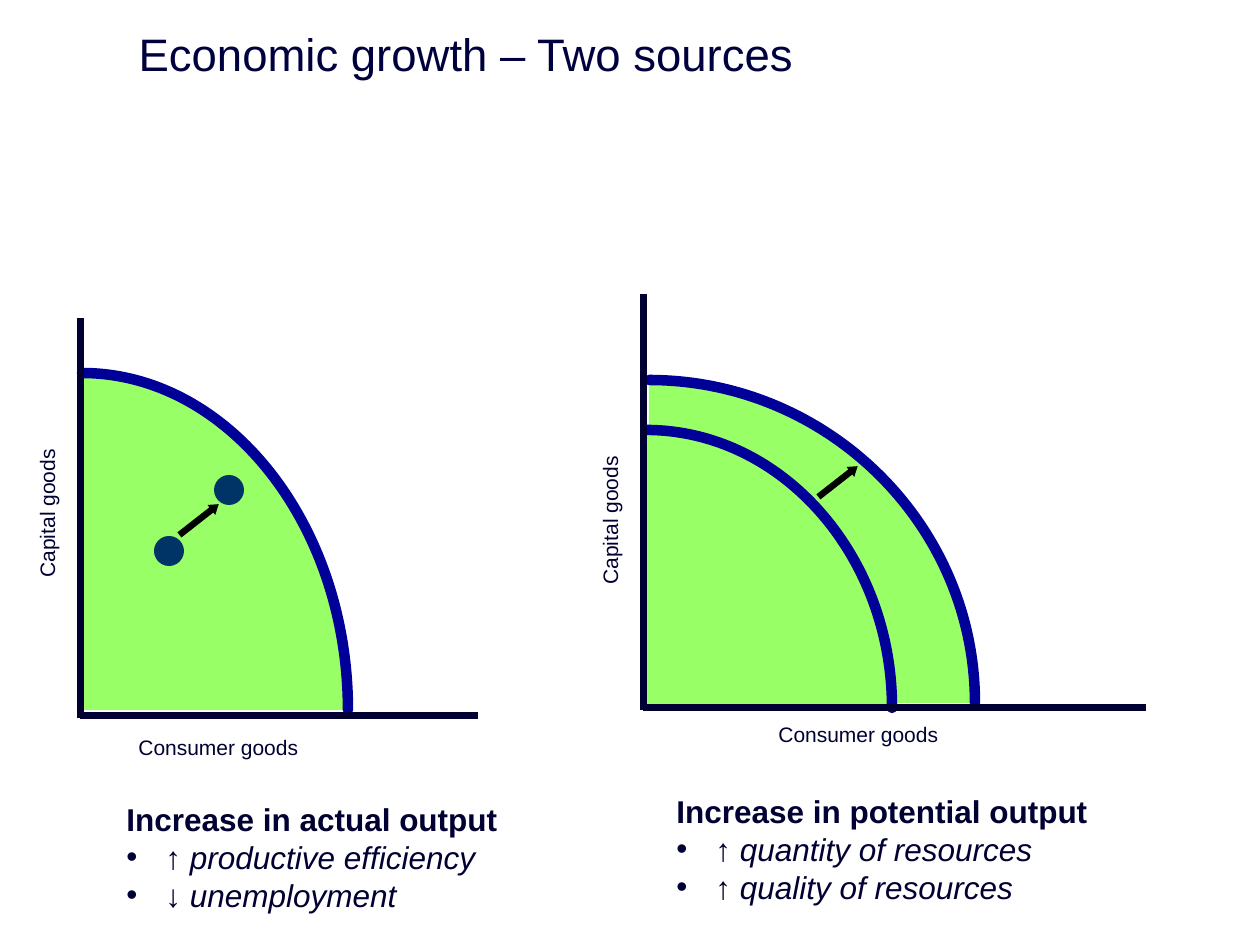
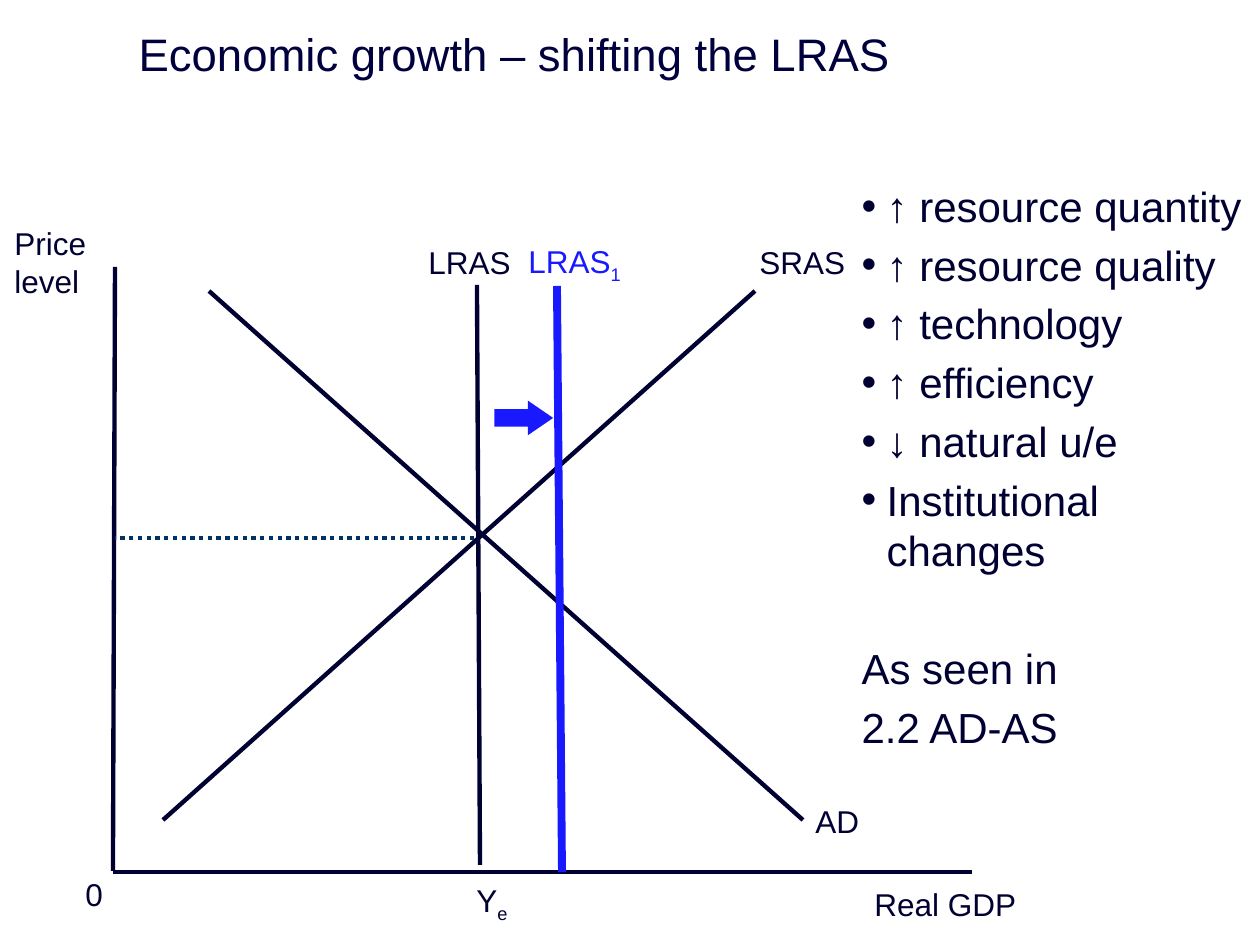
from lxml.etree import SubElement
from pptx import Presentation
from pptx.dml.color import RGBColor
from pptx.enum.dml import MSO_LINE_DASH_STYLE as Dash
from pptx.enum.shapes import MSO_CONNECTOR_TYPE as Connector, MSO_SHAPE as Shape
from pptx.enum.text import MSO_ANCHOR as Anchor, MSO_AUTO_SIZE as AutoSize, PP_ALIGN as Align
from pptx.oxml.ns import qn
from pptx.util import Emu, Pt

PX = 914400 / 126
COLORS = {
    "title": "00003E",
    "ink": "000032",
    "black": "000000",
    "curve": "000099",
    "region": "99FF66",
    "point": "003366",
    "guide": "003264",
    "shift": "1919FF",
}
FONT = "Arial"
ARC_PULL = 0.55
TITLE_BOX = (126, 21, 1134, 64)
TITLE_FRAME = {"vertical_anchor": Anchor.MIDDLE, "auto_size": AutoSize.NONE, "word_wrap": True}
BODY_FRAME = {"vertical_anchor": Anchor.TOP, "auto_size": AutoSize.NONE, "word_wrap": True}
LABEL_FRAME = {"auto_size": AutoSize.SHAPE_TO_FIT_TEXT, "word_wrap": True}


def px(length):
    return Emu(round(length * PX))


def color(name):
    return RGBColor.from_string(COLORS[name])


def set_values(target, values):
    for name, value in values.items():
        setattr(target, name, value)


def place(shape, box):
    set_values(shape, dict(zip(("left", "top", "width", "height"), map(px, box))))


def set_indent(paragraph, indent, bullet):
    properties = paragraph._p.get_or_add_pPr()
    properties.set("marL", str(px(indent)))
    properties.set("indent", str(-px(indent)))
    if bullet:
        SubElement(properties, qn("a:buFont")).set("typeface", FONT)
        SubElement(properties, qn("a:buChar")).set("char", "•")
    else:
        SubElement(properties, qn("a:buNone"))


def add_run(paragraph, text, size, color_name="ink", **values):
    run = paragraph.add_run()
    run.text = text
    set_values(run.font, {"name": FONT, "size": Pt(size), **values})
    run.font.color.rgb = color(color_name)
    return run


def add_title(slide, text):
    title = slide.shapes.title
    place(title, TITLE_BOX)
    set_values(title.text_frame, TITLE_FRAME)
    paragraph = title.text_frame.paragraphs[0]
    paragraph.alignment = Align.LEFT
    add_run(paragraph, text, 26, "title")


def add_label(slide, text, box, size=18, color_name="ink", subscript="", rotation=0):
    label = slide.shapes.add_textbox(*map(px, box))
    label.rotation = rotation
    set_values(label.text_frame, LABEL_FRAME)
    paragraph = label.text_frame.paragraphs[0]
    add_run(paragraph, text, size, color_name)
    if subscript:
        run = add_run(paragraph, subscript, size, color_name)
        run._r.get_or_add_rPr().set("baseline", "-25000")


def add_source_list(slide, heading, sources, box):
    frame = slide.shapes.add_textbox(*map(px, box)).text_frame
    set_values(frame, LABEL_FRAME)
    add_run(frame.paragraphs[0], heading, 18, bold=True)
    for index, (arrow, source) in enumerate(sources):
        paragraph = frame.add_paragraph()
        set_indent(paragraph, 39, True)
        add_run(paragraph, arrow + " ", 18, bold=True, italic=index > 0)
        add_run(paragraph, source, 18, bold=False, italic=True)


def add_body(slide, box, bullets, closing_lines):
    body = slide.placeholders[1]
    place(body, box)
    frame = body.text_frame
    set_values(frame, BODY_FRAME)
    lines = [(text, True) for text in bullets] + [(text, False) for text in closing_lines]
    for index, (text, bullet) in enumerate(lines):
        paragraph = frame.add_paragraph() if index else frame.paragraphs[0]
        set_indent(paragraph, 25 if bullet else 0, bullet)
        gap = 38.4 if index == len(bullets) else 4.8
        paragraph.space_before = Pt(gap if index else 0)
        add_run(paragraph, text, 24)


def add_line(slide, start, end, width=2.5, color_name="ink", dash=None):
    connector = slide.shapes.add_connector(Connector.STRAIGHT, *map(px, start + end))
    set_values(connector.line, {"width": Pt(width), "dash_style": dash})
    connector.line.color.rgb = color(color_name)
    SubElement(connector._element.spPr, qn("a:effectLst"))


def paint(shape, fill, line=None, width=0):
    shape.shadow.inherit = False
    shape.fill.solid()
    shape.fill.fore_color.rgb = color(fill)
    if line:
        shape.line.color.rgb = color(line)
        shape.line.width = Pt(width)
    else:
        shape.line.fill.background()


def add_arrow(slide, box, fill, line, rotation=0):
    arrow = slide.shapes.add_shape(Shape.RIGHT_ARROW, *map(px, box))
    arrow.adjustments[0] = 0.5
    arrow.adjustments[1] = 0.73
    arrow.rotation = rotation
    paint(arrow, fill, line, 2)
    SubElement(arrow.line._get_or_add_ln(), qn("a:miter")).set("lim", "800000")


def add_point(slide, left, top):
    paint(slide.shapes.add_shape(Shape.OVAL, *map(px, (left, top, 30, 30))), "point")


def add_path_step(path, kind, *points):
    step = SubElement(path, qn("a:" + kind))
    for x, y in points:
        point = SubElement(step, qn("a:pt"))
        point.set("x", str(round(x)))
        point.set("y", str(round(y)))


def add_frontier(slide, left, top, width, height):
    builder = slide.shapes.build_freeform(left, top, scale=PX)
    builder.add_line_segments([(left + width, top + height), (left, top + height)])
    frontier = builder.convert_to_shape()
    paint(frontier, "region", "curve", 6)
    frontier.line._get_or_add_ln().set("cap", "rnd")
    path_list = frontier._element.spPr.find(".//" + qn("a:pathLst"))
    path_list.remove(path_list[0])
    wide, high = px(width), px(height)
    for hidden, value in (("fill", "none"), ("stroke", "0")):
        path = SubElement(path_list, qn("a:path"))
        for name, setting in (("w", str(wide)), ("h", str(high)), (hidden, value)):
            path.set(name, setting)
        add_path_step(path, "moveTo", (0, 0))
        add_path_step(path, "cubicBezTo", (wide * ARC_PULL, 0),
                      (wide, high * (1 - ARC_PULL)), (wide, high))
        if hidden == "stroke":
            add_path_step(path, "lnTo", (0, high))
            add_path_step(path, "close")


def add_axes(slide, left, top, bottom, right):
    add_line(slide, (left, top), (left, bottom + 2), 4)
    add_line(slide, (left - 1, bottom), (right, bottom), 4)


def build_two_sources(slide):
    add_title(slide, "Economic growth – Two sources")
    add_frontier(slide, 649, 380, 326, 323)
    add_frontier(slide, 646, 430, 246, 278)
    add_axes(slide, 644, 294, 708, 1146)
    add_arrow(slide, (815, 479, 45, 6), "ink", "black", 322)
    add_frontier(slide, 82, 373, 266, 337)
    add_axes(slide, 81, 318, 716, 478)
    add_point(slide, 154, 536)
    add_point(slide, 214, 475)
    add_arrow(slide, (176, 517, 45, 6), "ink", "black", 322)
    add_source_list(slide, "Increase in actual output",
                    [("↑", "productive efficiency"), ("↓", "unemployment")],
                    (114, 794, 486, 127))
    add_source_list(slide, "Increase in potential output",
                    [("↑", "quantity of resources"), ("↑", "quality of resources")],
                    (664, 786, 486, 127))
    for left, top in ((126, 728), (766, 715)):
        add_label(slide, "Consumer goods", (left, top, 386, 38), 12)
    for left, top in ((417, 385), (-146, 378)):
        add_label(slide, "Capital goods", (left, top, 386, 38), 12, rotation=270)


def build_lras_shift(slide):
    add_title(slide, "Economic growth – shifting the LRAS")
    add_body(slide, (849, 174, 411, 624),
             ["↑ resource quantity", "↑ resource quality", "↑ technology", "↑ efficiency",
              "↓ natural u/e", "Institutional changes"],
             ["As seen in", "2.2 AD-AS"])
    for start, end in (
        ((115, 267), (113, 871)),
        ((972, 872), (113, 872)),
        ((755, 291), (163, 820)),
        ((209, 291), (803, 820)),
    ):
        add_line(slide, start, end)
    add_line(slide, (474, 538), (115, 538), color_name="guide", dash=Dash.ROUND_DOT)
    add_line(slide, (477, 285), (480, 865))
    add_line(slide, (557, 286), (562, 872), 4.5, "shift")
    add_arrow(slide, (496, 404, 54, 28), "shift", "shift")
    for text, box in (
        ("Real GDP", (862, 879, 219, 50)),
        ("0", (73, 869, 81, 50)),
        ("Price level", (2, 218, 141, 89)),
        ("SRAS", (747, 237, 131, 50)),
        ("AD", (803, 796, 102, 50)),
        ("LRAS", (416, 237, 131, 50)),
    ):
        add_label(slide, text, box)
    add_label(slide, "Y", (464, 875, 77, 50), subscript="e")
    add_label(slide, "LRAS", (516, 236, 131, 50), color_name="shift", subscript="1")


def main():
    presentation = Presentation()
    set_values(presentation, {"slide_width": px(1260), "slide_height": px(945)})
    layouts = presentation.slide_layouts
    build_two_sources(presentation.slides.add_slide(layouts.get_by_name("Title Only")))
    build_lras_shift(presentation.slides.add_slide(layouts.get_by_name("Title and Content")))
    presentation.save("out.pptx")


if __name__ == "__main__":
    main()
